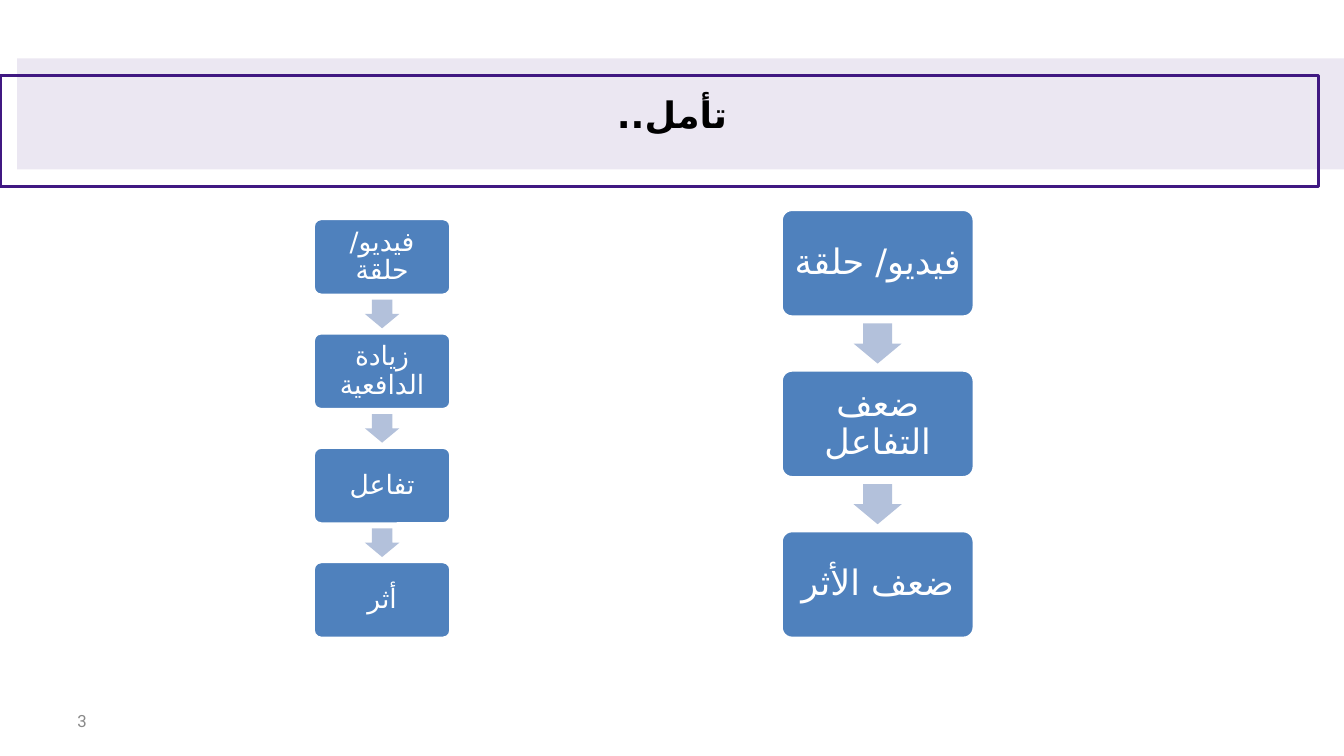
import lxml.etree
import pptx
import pptx.dml.color
import pptx.enum.shapes
import pptx.enum.text
import pptx.oxml
import pptx.oxml.ns
import pptx.util

PX = 9144
ARABIC_FONT = "DejaVu Sans"
COLORS = {
    "purple": "401882",
    "node": "4F81BD",
    "arrow": "B3C1DB",
    "white": "FFFFFF",
    "black": "000000",
    "gray": "898989",
}
SHAPES = pptx.enum.shapes.MSO_SHAPE
ALIGN = pptx.enum.text.PP_ALIGN


def emu(*lengths):
    return [round(length * PX) for length in lengths]


def rgb(name):
    return pptx.dml.color.RGBColor.from_string(COLORS[name])


def add_shape(slide, kind, box, fill=None, line=None, line_width=0):
    shape = slide.shapes.add_shape(kind, *emu(*box))
    shape.shadow.inherit = False
    if fill:
        shape.fill.solid()
        shape.fill.fore_color.rgb = rgb(fill)
    else:
        shape.fill.background()
    if line:
        shape.line.color.rgb = rgb(line)
        shape.line.width = pptx.util.Pt(line_width)
    else:
        shape.line.fill.background()
    return shape


def write(shape, text, font, size, color, align, inset, bold=False, rtl=True):
    frame = shape.text_frame
    frame.text = text
    frame.word_wrap = True
    frame.auto_size = pptx.enum.text.MSO_AUTO_SIZE.NONE
    frame.vertical_anchor = pptx.enum.text.MSO_ANCHOR.MIDDLE
    frame.margin_left, frame.margin_right = emu(inset, inset)
    frame.margin_top, frame.margin_bottom = emu(inset / 2, inset / 2)
    paragraph = frame.paragraphs[0]
    paragraph.alignment = align
    run = paragraph.runs[0]
    run.font.name = font
    run.font.size = pptx.util.Pt(size)
    run.font.bold = bold
    run.font.color.rgb = rgb(color)
    if rtl:
        paragraph._p.get_or_add_pPr().set("rtl", "1")
        script_font = lxml.etree.SubElement(run.font._element, pptx.oxml.ns.qn("a:cs"))
        script_font.set("typeface", ARABIC_FONT)
    return paragraph


def add_header(slide, box):
    left, top, width, height = box
    title = slide.shapes.title
    band = add_shape(slide, SHAPES.RECTANGLE, (left + 17, top, width - 17, height - 17), "purple")
    color = band.fill._xPr.find(".//" + pptx.oxml.ns.qn("a:srgbClr"))
    lxml.etree.SubElement(color, pptx.oxml.ns.qn("a:alpha")).set("val", "10000")
    frame = add_shape(slide, SHAPES.RECTANGLE, (left, top + 17, width - 25, height - 17),
                      line="purple", line_width=2.25)
    for shape in (band, frame):
        title.element.addprevious(shape.element)
    title.left, title.top, title.width, title.height = emu(left + 204, top + 17, 925, 77)
    write(title, "تأمل..", "Lato", 26, "black", ALIGN.CENTER, 10, bold=True)


def add_flow(slide, box, steps, size):
    left, top, width, height = box
    node_height = height / (1.5 * len(steps) - 0.5)
    gap = node_height / 2
    arrow_width, arrow_height = 0.45 * node_height, 0.375 * node_height
    for index, step in enumerate(steps):
        node_top = top + index * (node_height + gap)
        if index:
            arrow = add_shape(slide, SHAPES.DOWN_ARROW,
                              (left + (width - arrow_width) / 2,
                               node_top - (gap + arrow_height) / 2,
                               arrow_width, arrow_height), "arrow")
            arrow.adjustments[0] = 0.6
            arrow.adjustments[1] = 0.5
        node = add_shape(slide, SHAPES.ROUNDED_RECTANGLE, (left, node_top, width, node_height),
                         "node", "white", 2)
        node.adjustments[0] = 0.1
        paragraph = write(node, step, "Lato", size, "white", ALIGN.CENTER, 8)
        paragraph.line_spacing = 0.9


def add_page_number(slide, box, number):
    text_box = slide.shapes.add_textbox(*emu(*box))
    write(text_box, number, "Roboto", 12, "gray", ALIGN.LEFT, 10, rtl=False)


def main():
    presentation = pptx.Presentation()
    presentation.slide_width, presentation.slide_height = emu(1333, 750)
    slide = presentation.slides.add_slide(presentation.slide_layouts[5])
    add_header(slide, (0, 58, 1333, 127))
    add_flow(slide, (775, 208, 191, 425), ["فيديو/ حلقة", "ضعف التفاعل", "ضعف الأثر"], 25)
    add_flow(slide, (311, 217, 136, 416),
             ["فيديو/ حلقة", "زيادة الدافعية", "تفاعل", "أثر"], 19)
    add_page_number(slide, (67, 695, 311, 40), "3")
    presentation.save("out.pptx")


if __name__ == "__main__":
    main()
